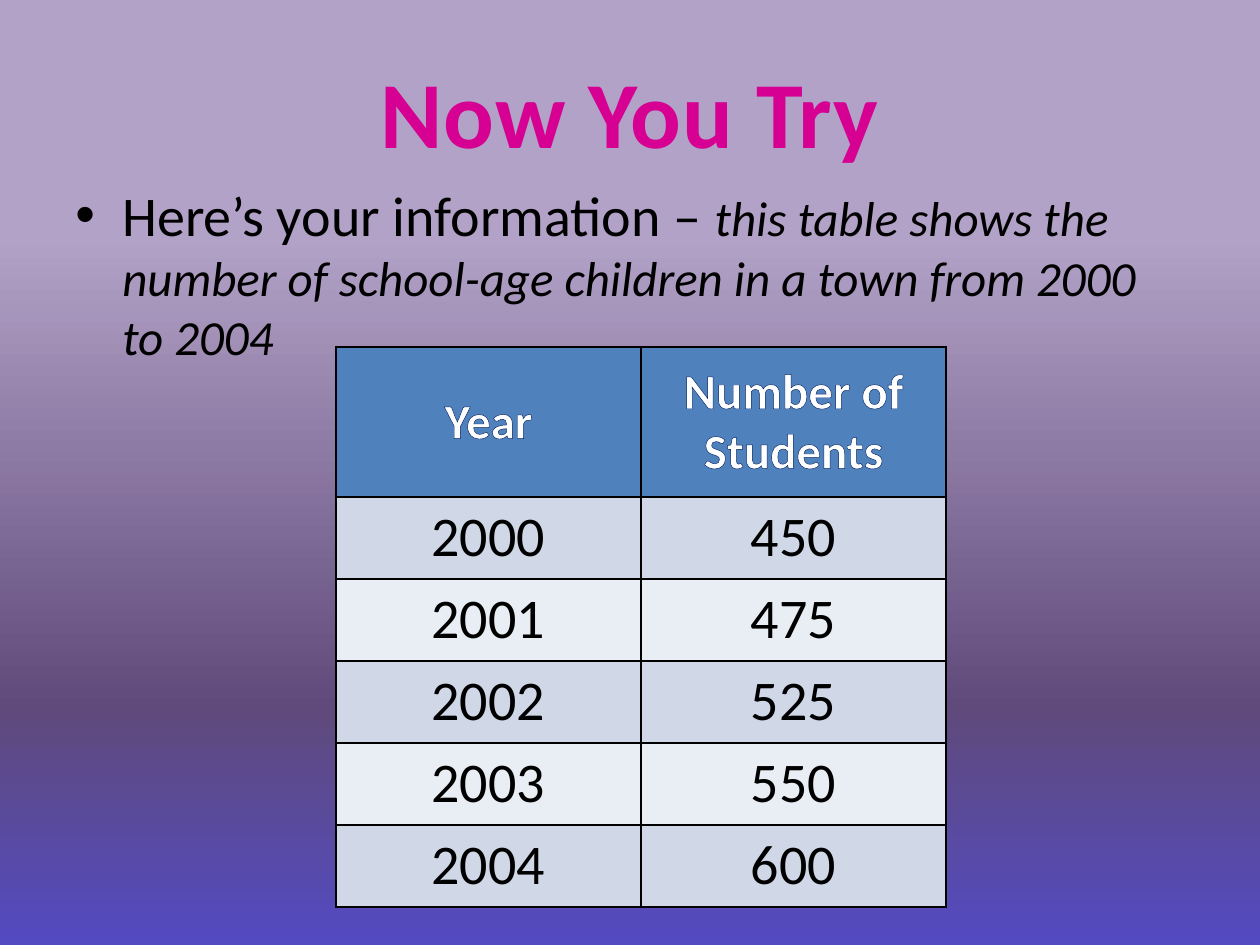
from pptx import Presentation
from pptx.dml.color import RGBColor
from pptx.enum.text import MSO_ANCHOR, PP_ALIGN
from pptx.oxml import parse_xml
from pptx.oxml.ns import nsdecls, qn
from pptx.util import Emu, Pt

CENTER = PP_ALIGN.CENTER
MIDDLE = MSO_ANCHOR.MIDDLE
TOP = MSO_ANCHOR.TOP

PX_PER_INCH = 126
FONT = "Calibri"
BLACK = RGBColor(0x00, 0x00, 0x00)
WHITE = RGBColor(0xFF, 0xFF, 0xFF)
MAGENTA = RGBColor(0xD6, 0x00, 0x93)
NAVY = RGBColor(0x00, 0x20, 0x60)
HEADER_BLUE = RGBColor(0x4F, 0x81, 0xBD)
BAND_COLORS = (RGBColor(0xD0, 0xD8, 0xE8), RGBColor(0xE9, 0xED, 0xF4))
LILAC = RGBColor(0xB3, 0xA2, 0xC7)
PLUM = RGBColor(0x60, 0x4A, 0x7B)
INDIGO = RGBColor(0x53, 0x4A, 0xC2)
BACKGROUND_STOPS = ((0, LILAC), (25, LILAC), (75, PLUM), (100, INDIGO))

HEADINGS = ("Year", "Number of Students")
STUDENTS_BY_YEAR = (
    (2000, 450), (2001, 475), (2002, 525), (2003, 550), (2004, 600))
COLUMN_WIDTH = 305
HEADER_HEIGHT = 150
ROW_HEIGHT = 82


def px(length):
    return Emu(round(length * 914400 / PX_PER_INCH))


def set_font(font, size, color, bold=False):
    font.name = FONT
    font.size = Pt(size)
    font.bold = bold
    font.color.rgb = color


def line_xml(tag, color, width):
    return parse_xml(
        f'<a:{tag} {nsdecls("a")} w="{Pt(width)}"><a:solidFill>'
        f'<a:srgbClr val="{color}"/></a:solidFill></a:{tag}>'
    )


def paint_background(slide):
    fill = slide.background.fill
    fill.gradient()
    fill.gradient_angle = 270
    stops = slide.element.find(".//" + qn("a:gsLst"))
    for stop in list(stops):
        stops.remove(stop)
    for position, color in BACKGROUND_STOPS:
        stops.append(parse_xml(
            f'<a:gs {nsdecls("a")} pos="{position * 1000}">'
            f'<a:srgbClr val="{color}"/></a:gs>'
        ))


def add_text_frame(slide, left, top, width, height, anchor):
    frame = slide.shapes.add_textbox(
        px(left), px(top), px(width), px(height)).text_frame
    frame.word_wrap = True
    frame.vertical_anchor = anchor
    return frame


def add_run(paragraph, text):
    run = paragraph.add_run()
    run.text = text
    return run


def add_title(slide):
    title = add_text_frame(slide, 63, 32, 1134, 157, MIDDLE).paragraphs[0]
    title.alignment = CENTER
    set_font(title.font, 54, MAGENTA, bold=True)
    heading = add_run(title, "Now You Try")
    heading.font.bold = True
    heading._r.get_or_add_rPr().set("spc", "50")


def add_information(slide):
    information = add_text_frame(slide, 63, 174, 1134, 687, TOP).paragraphs[0]
    information.space_before = Pt(6.4)
    properties = information._p.get_or_add_pPr()
    properties.set("marL", str(px(47)))
    properties.set("indent", str(-px(47)))
    properties.append(parse_xml(
        f'<a:buFont {nsdecls("a")} typeface="Arial"/>'))
    properties.append(parse_xml(f'<a:buChar {nsdecls("a")} char="•"/>'))

    lead = add_run(information, "Here’s your information – ")
    set_font(lead.font, 32, BLACK)
    detail = add_run(
        information,
        "this table shows the number of school-age children "
        "in a town from 2000 to 2004")
    set_font(detail.font, 28, BLACK)
    detail.font.italic = True


def fill_cell(cell, text, fill_color):
    """Write centred text in a filled, bordered cell and return its run."""
    cell.fill.solid()
    cell.fill.fore_color.rgb = fill_color
    properties = cell._tc.get_or_add_tcPr()
    for index, side in enumerate(("lnL", "lnR", "lnT", "lnB")):
        properties.insert(index, line_xml(side, BLACK, 1))
    paragraph = cell.text_frame.paragraphs[0]
    paragraph.alignment = CENTER
    return add_run(paragraph, text)


def add_student_table(slide):
    row_count = len(STUDENTS_BY_YEAR) + 1
    table = slide.shapes.add_table(
        row_count, len(HEADINGS), px(336), px(347),
        px(COLUMN_WIDTH * len(HEADINGS)),
        px(HEADER_HEIGHT + ROW_HEIGHT * len(STUDENTS_BY_YEAR))).table
    for column in table.columns:
        column.width = px(COLUMN_WIDTH)
    for index, row in enumerate(table.rows):
        row.height = px(ROW_HEIGHT if index else HEADER_HEIGHT)

    for column, heading in enumerate(HEADINGS):
        cell = table.cell(0, column)
        cell.vertical_anchor = MIDDLE
        run = fill_cell(cell, heading, HEADER_BLUE)
        set_font(run.font, 28, WHITE, bold=True)
        run._r.get_or_add_rPr().insert(0, line_xml("ln", NAVY, 0.75))

    for index, record in enumerate(STUDENTS_BY_YEAR):
        band_color = BAND_COLORS[index % len(BAND_COLORS)]
        for column, value in enumerate(record):
            run = fill_cell(
                table.cell(index + 1, column), str(value), band_color)
            set_font(run.font, 32, BLACK)


def main():
    presentation = Presentation()
    presentation.slide_width = px(1260)
    presentation.slide_height = px(945)
    slide = presentation.slides.add_slide(presentation.slide_layouts[6])
    paint_background(slide)
    add_information(slide)
    add_title(slide)
    add_student_table(slide)
    presentation.save("out.pptx")


if __name__ == "__main__":
    main()
